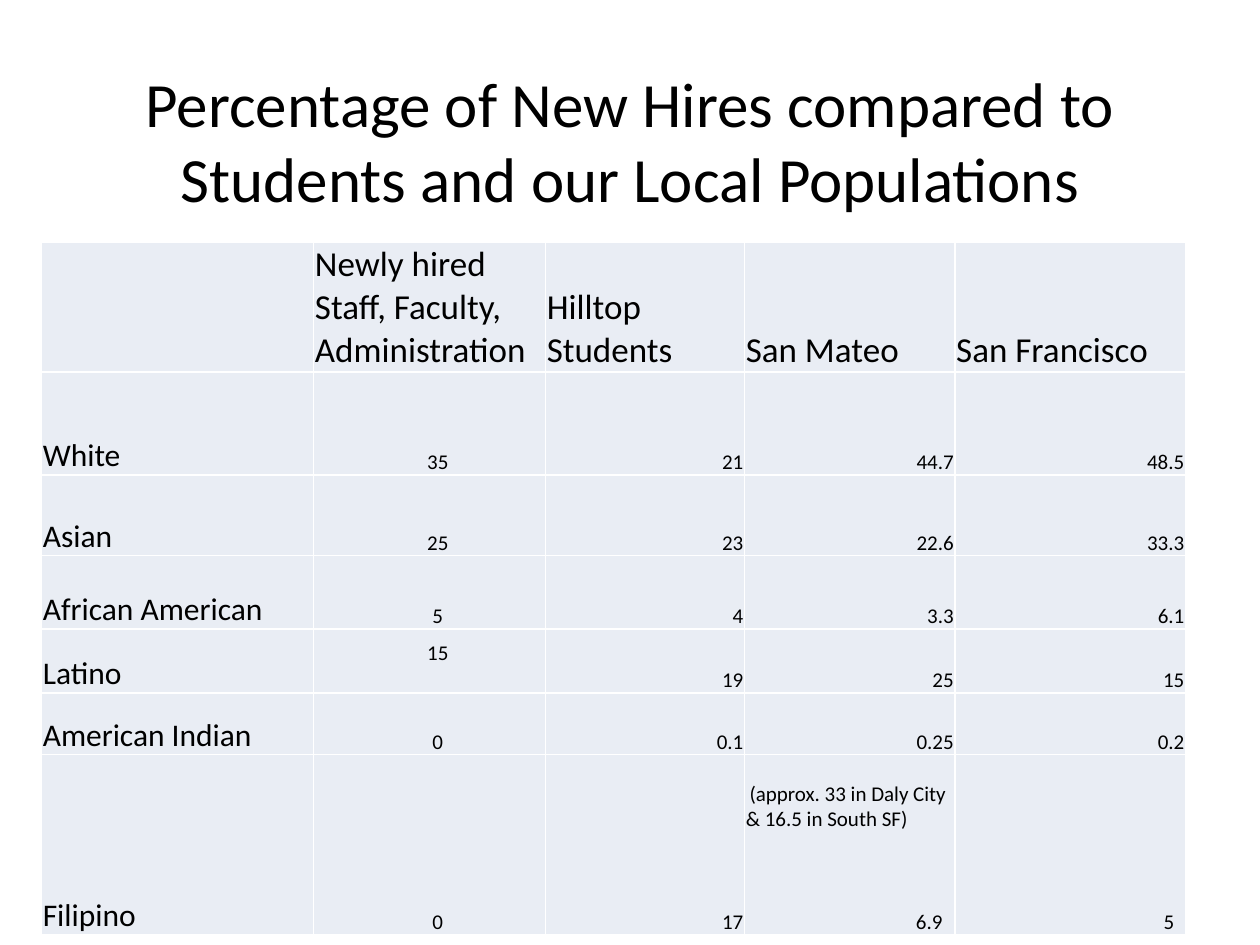
from pptx import Presentation
from pptx.dml.color import RGBColor
from pptx.enum.text import MSO_ANCHOR, PP_ALIGN
from pptx.util import Inches, Pt

BLACK = RGBColor(0x00, 0x00, 0x00)
PALE_BLUE = RGBColor(0xE9, 0xED, 0xF4)
FONT = "Calibri"

ROWS = [
    ["", "Newly hired Staff, Faculty, Administration", "Hilltop Students",
     "San Mateo", "San Francisco"],
    ["White", "35", "21", "44.7", "48.5"],
    ["Asian", "25", "23", "22.6", "33.3"],
    ["African American", "5", "4", "3.3", "6.1"],
    ["Latino", "15", "19", "25", "15"],
    ["American Indian", "0", "0.1", "0.25", "0.2"],
    ["Filipino", "0", "17",
     "(approx. 33 in Daly City & 16.5 in South SF)\n6.9", "5"],
]
COLUMN_WIDTHS = [2.16, 1.84, 1.58, 1.67, 1.83]
ROW_HEIGHTS = [1.02, 0.82, 0.64, 0.58, 0.51, 0.49, 1.43]


def format_text(paragraph, size):
    for run in paragraph.runs:
        run.font.name = FONT
        run.font.size = Pt(size)
        run.font.bold = False
        run.font.color.rgb = BLACK


prs = Presentation()
prs.slide_width, prs.slide_height = Inches(10), Inches(7.5)
slide = prs.slides.add_slide(prs.slide_layouts[5])

# Title
title = slide.shapes.title
title.left, title.top = Inches(0.5), Inches(0.3)
title.width, title.height = Inches(9), Inches(1.62)
title.text_frame.text = ("Percentage of New Hires compared to "
                         "Students and our Local Populations")
title.text_frame.vertical_anchor = MSO_ANCHOR.MIDDLE
title.text_frame.paragraphs[0].alignment = PP_ALIGN.CENTER
format_text(title.text_frame.paragraphs[0], 36)

# Table: the built-in style supplies the white rules
hires = slide.shapes.add_table(
    len(ROWS), len(COLUMN_WIDTHS), Inches(0.33), Inches(1.92),
    Inches(sum(COLUMN_WIDTHS)), Inches(sum(ROW_HEIGHTS))).table
hires.first_row = False
hires.horz_banding = False
for column, width in zip(hires.columns, COLUMN_WIDTHS):
    column.width = Inches(width)
for row, height in zip(hires.rows, ROW_HEIGHTS):
    row.height = Inches(height)

for r, values in enumerate(ROWS):
    for c, value in enumerate(values):
        cell = hires.cell(r, c)
        cell.fill.solid()
        cell.fill.fore_color.rgb = PALE_BLUE
        cell.vertical_anchor = MSO_ANCHOR.BOTTOM
        cell.margin_left = cell.margin_right = cell.margin_top = Inches(0.01)
        cell.margin_bottom = 0
        cell.text_frame.text = value
        size = 20 if r == 0 else 18 if c == 0 else 12
        for paragraph in cell.text_frame.paragraphs:
            if r == 0 or c == 0:
                paragraph.alignment = PP_ALIGN.LEFT
            elif c == 1:
                paragraph.alignment = PP_ALIGN.CENTER
            else:
                paragraph.alignment = PP_ALIGN.RIGHT
            format_text(paragraph, size)
        if r > 0 and c == 1:
            cell.margin_left = Inches(0.14)

# Latino new hires sit higher in their cell
hires.cell(4, 1).margin_bottom = Inches(0.21)

# Filipino: local note above the San Mateo value, both values set in a little
note, san_mateo = hires.cell(6, 3).text_frame.paragraphs
note.alignment = san_mateo.alignment = PP_ALIGN.LEFT
note.space_after = Pt(44)
note._p.get_or_add_pPr().set("indent", str(Inches(0.03)))
san_mateo._p.get_or_add_pPr().set("marL", str(Inches(1.35)))
hires.cell(6, 4).margin_right = Inches(0.09)

prs.save("out.pptx")
